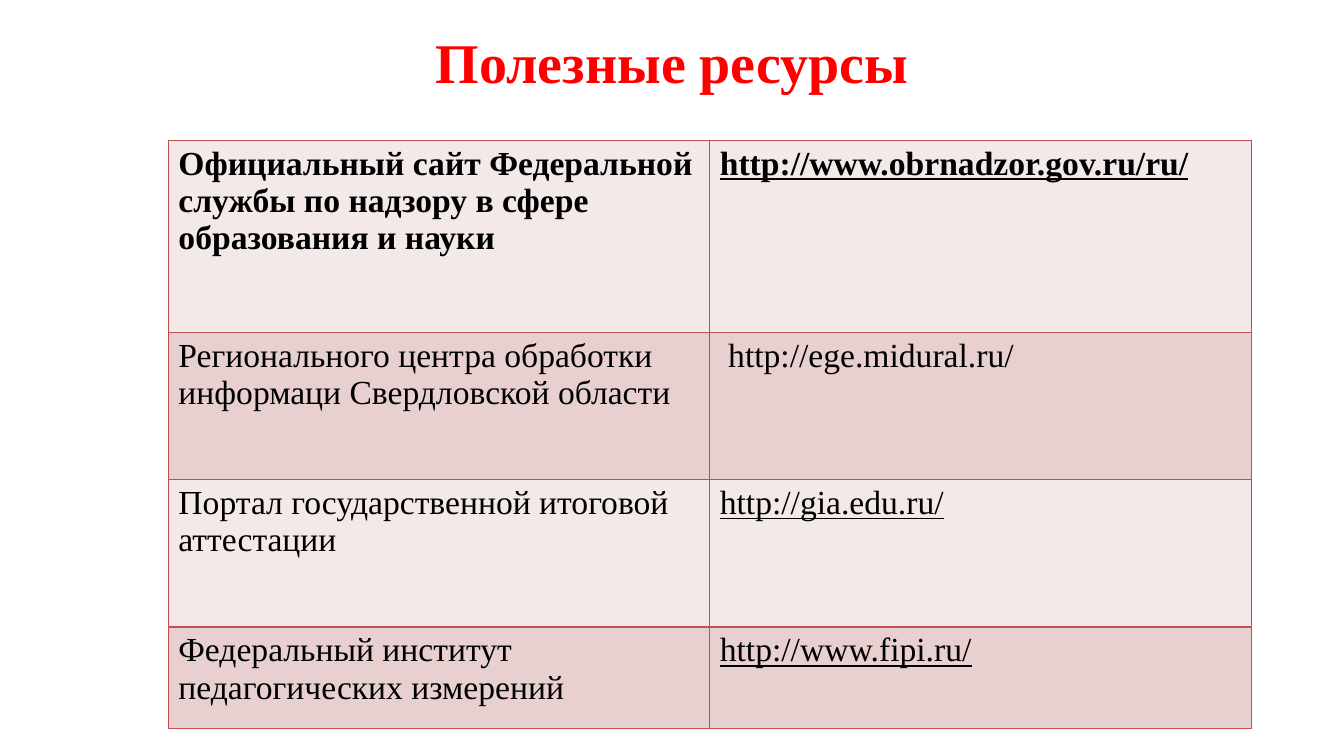
from dataclasses import dataclass

from lxml.etree import fromstring
from pptx import Presentation
from pptx.dml.color import RGBColor
from pptx.enum.text import MSO_ANCHOR, PP_ALIGN
from pptx.oxml.ns import nsdecls
from pptx.util import Inches, Pt


@dataclass(frozen=True)
class Theme:
    """Colours and type sizes of the slide."""
    font: str = "Times New Roman"
    title_size: int = 40
    body_size: int = 24
    title: str = "FF0000"
    ink: str = "000000"
    border: str = "C0504D"
    bands: tuple = ("F4E9E9", "E8D0D0")


THEME = Theme()
COLUMN_WIDTH = 5.37
ROW_HEIGHTS = (1.91, 1.46, 1.46, 1.01)
RESOURCES = (
    ("Официальный сайт Федеральной\nслужбы по надзору в сфере\nобразования и науки",
     "http://www.obrnadzor.gov.ru/ru/", True),
    ("Регионального центра обработки\nинформаци Свердловской области",
     " http://ege.midural.ru/", False),
    ("Портал государственной итоговой\nаттестации", "http://gia.edu.ru/", True),
    ("Федеральный институт\nпедагогических измерений", "http://www.fipi.ru/", True),
)


def write_text(frame, text, size=THEME.body_size, color=THEME.ink,
               bold=False, underline=False, align=PP_ALIGN.LEFT):
    """Fill a text frame with one formatted paragraph per line of text."""
    frame.word_wrap = True
    frame.text = text
    for paragraph in frame.paragraphs:
        paragraph.alignment = align
        for run in paragraph.runs:
            run.font.name = THEME.font
            run.font.size = Pt(size)
            run.font.bold = bold
            run.font.underline = underline
            run.font.color.rgb = RGBColor.from_string(color)


def add_title(slide, text):
    """Add the centred slide title."""
    box = slide.shapes.add_textbox(Inches(0), Inches(0.02), Inches(13.33), Inches(1.17))
    box.text_frame.vertical_anchor = MSO_ANCHOR.MIDDLE
    write_text(box.text_frame, text, size=THEME.title_size, color=THEME.title,
               bold=True, align=PP_ALIGN.CENTER)


def style_cell(cell, fill):
    """Give a cell its fill and a thin border on all four sides."""
    cell.fill.solid()
    cell.fill.fore_color.rgb = RGBColor.from_string(fill)
    properties = cell._tc.get_or_add_tcPr()
    for index, side in enumerate("LRTB"):
        properties.insert(index, fromstring(
            f'<a:ln{side} {nsdecls("a")} w="{Pt(1)}"><a:solidFill>'
            f'<a:srgbClr val="{THEME.border}"/></a:solidFill></a:ln{side}>'))


def add_resource_table(slide, resources):
    """Add the two-column table of resources with banded rows."""
    table = slide.shapes.add_table(
        len(resources), 2, Inches(1.67), Inches(1.39),
        Inches(2 * COLUMN_WIDTH), Inches(sum(ROW_HEIGHTS))).table
    for column in table.columns:
        column.width = Inches(COLUMN_WIDTH)
    for index, (name, address, underline) in enumerate(resources):
        row = table.rows[index]
        row.height = Inches(ROW_HEIGHTS[index])
        name_cell, address_cell = row.cells
        for cell in (name_cell, address_cell):
            style_cell(cell, THEME.bands[index % 2])
        write_text(name_cell.text_frame, name, bold=index == 0)
        write_text(address_cell.text_frame, address, bold=index == 0, underline=underline)


def main():
    """Build the slide and save it."""
    presentation = Presentation()
    presentation.slide_width = Inches(13.33)
    presentation.slide_height = Inches(7.5)
    slide = presentation.slides.add_slide(presentation.slide_layouts[6])
    add_title(slide, "Полезные ресурсы")
    add_resource_table(slide, RESOURCES)
    presentation.save("out.pptx")


if __name__ == "__main__":
    main()
